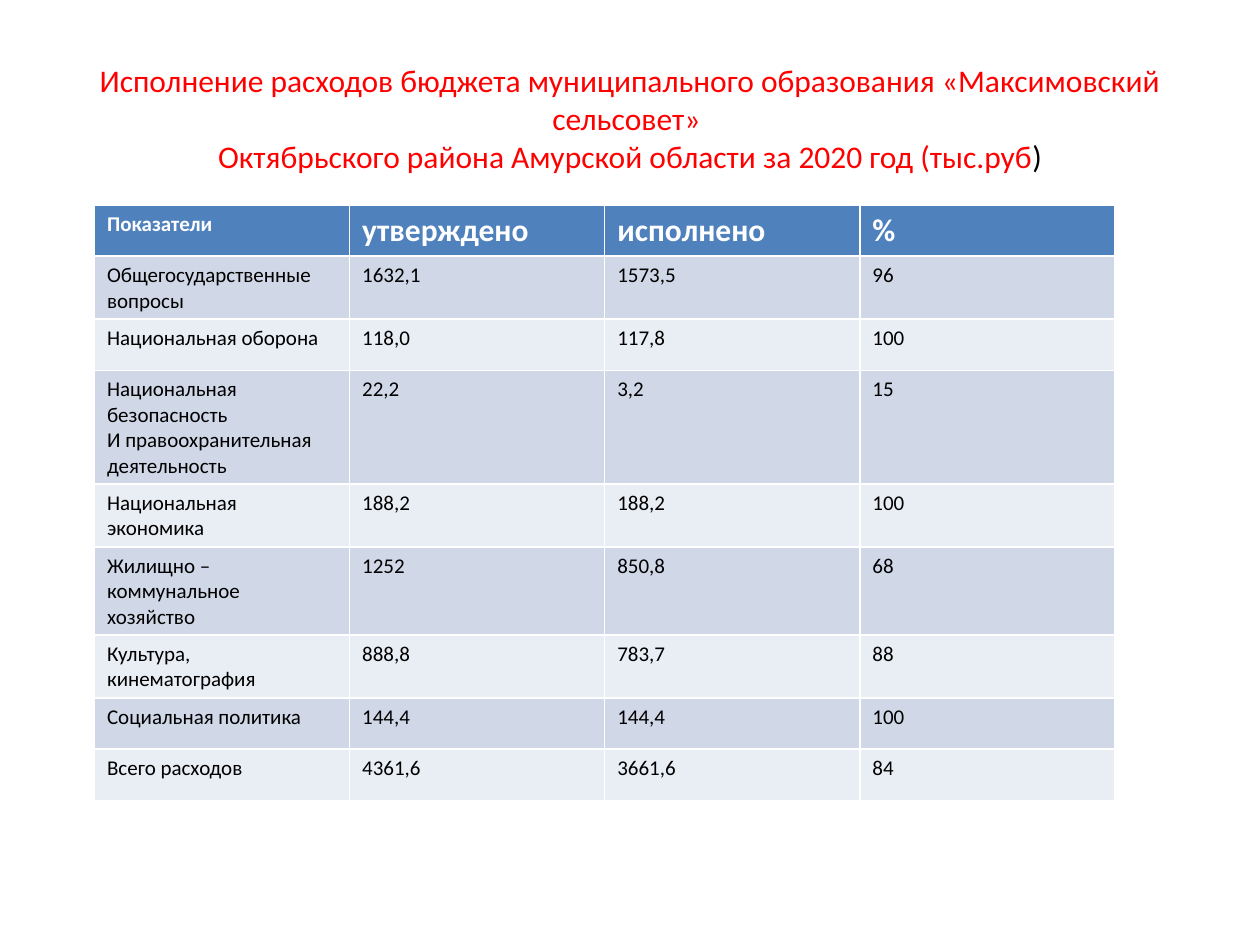
from pptx import Presentation
from pptx.dml.color import RGBColor
from pptx.enum.text import MSO_ANCHOR, PP_ALIGN
from pptx.util import Inches, Pt

FONT = "Calibri"
HUES = {"red": "FF0000", "black": "000000", "white": "FFFFFF",
        "head": "4F81BD", "odd": "D0D8E8", "even": "E9EDF4"}
TITLE = ("Исполнение расходов бюджета муниципального образования "
         "«Максимовский сельсовет» ",
         "Октябрьского района Амурской области за 2020 год (тыс.руб")
ROWS = [
    ("Показатели", "утверждено", "исполнено", "%"),
    ("Общегосударственные вопросы", "1632,1", "1573,5", "96"),
    ("Национальная оборона", "118,0", "117,8", "100"),
    ("Национальная безопасность\nИ правоохранительная деятельность",
     "22,2", "3,2", "15"),
    ("Национальная экономика", "188,2", "188,2", "100"),
    ("Жилищно – коммунальное\nхозяйство", "1252", "850,8", "68"),
    ("Культура, кинематография", "888,8", "783,7", "88"),
    ("Социальная политика", "144,4", "144,4", "100"),
    ("Всего расходов", "4361,6", "3661,6", "84"),
]


def tint(name):
    return RGBColor.from_string(HUES[name])


def style(font, size, hue, bold=False):
    font.name, font.size, font.bold = FONT, Pt(size), bold
    font.color.rgb = tint(hue)


def add_title(slide, box):
    frame = slide.shapes.add_textbox(*box).text_frame
    frame.word_wrap = True
    frame.vertical_anchor = MSO_ANCHOR.MIDDLE
    para = frame.paragraphs[0]
    para.alignment = PP_ALIGN.CENTER
    style(para.font, 18, "red")
    first, second = TITLE
    for text, hue in ((first, "red"), (second, "red"), (")", "black")):
        run = para.add_run()
        run.text = text
        style(run.font, 18, hue)
        if text == first:
            para.add_line_break()


def fill_cell(cell, text, fill, size, hue, bold):
    cell.fill.solid()
    cell.fill.fore_color.rgb = tint(fill)
    cell.text = text
    for para in cell.text_frame.paragraphs:
        style(para.font, size, hue, bold)


def add_budget(slide, box):
    """Place the table; rows with wrapped text grow past the even height."""
    table = slide.shapes.add_table(len(ROWS), len(ROWS[0]), *box).table
    for r, row in enumerate(ROWS):
        head = r == 0
        fill = "head" if head else "odd" if r % 2 else "even"
        for c, text in enumerate(row):
            size = 18 if head and c else 12
            fill_cell(table.cell(r, c), text, fill, size,
                      "white" if head else "black", head)


def main():
    deck = Presentation()
    deck.slide_width, deck.slide_height = Inches(10), Inches(7.5)
    slide = deck.slides.add_slide(deck.slide_layouts[6])

    def share(x, y, w, h):
        wide, high = deck.slide_width, deck.slide_height
        return int(x * wide), int(y * high), int(w * wide), int(h * high)

    add_title(slide, share(0.05, 0.04, 0.9, 0.17))
    add_budget(slide, share(0.075, 0.217, 0.81, 0.487))
    deck.save("out.pptx")


if __name__ == "__main__":
    main()
